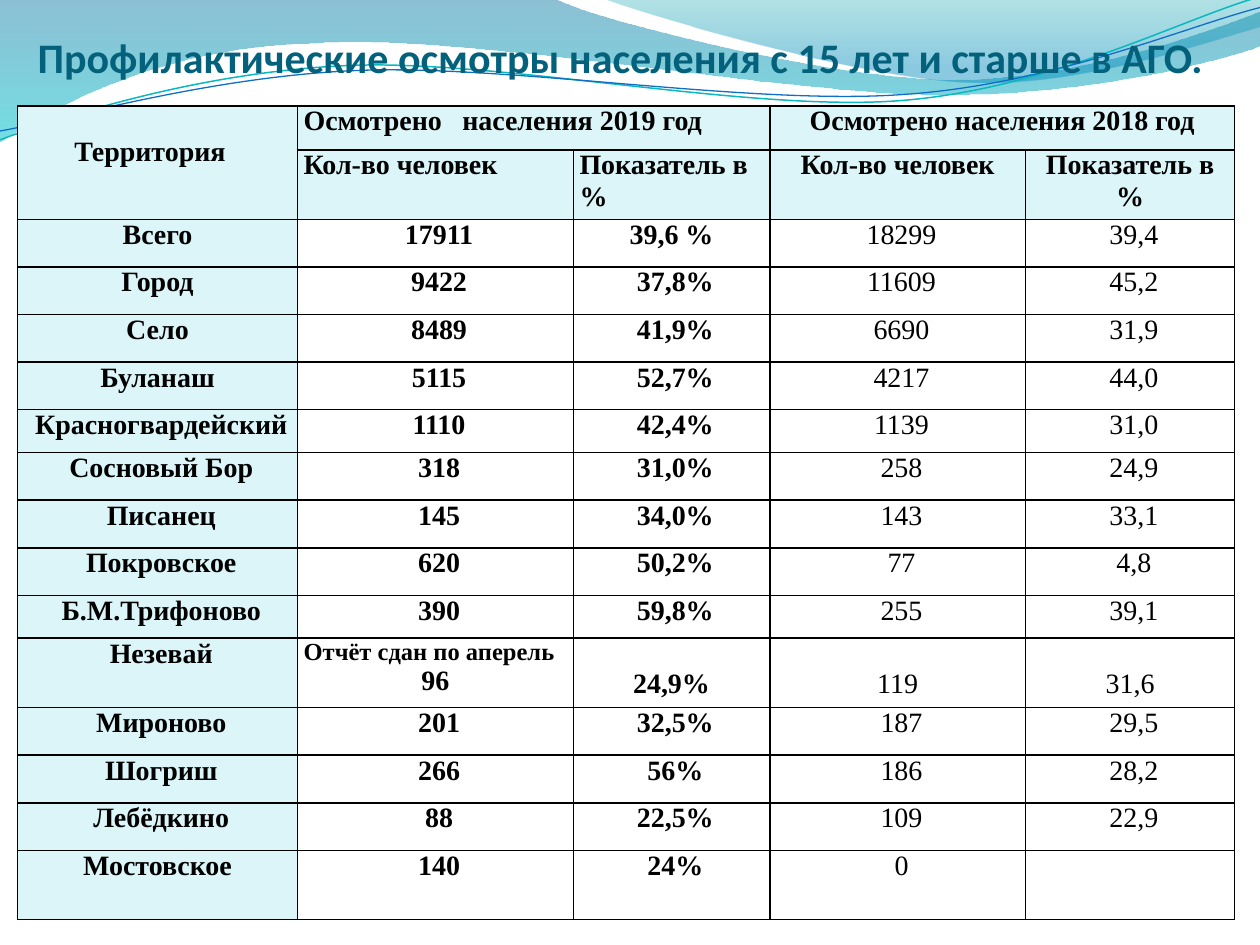
from math import cos, radians, sin

from pptx import Presentation
from pptx.dml.color import RGBColor
from pptx.enum.text import PP_ALIGN
from pptx.oxml import parse_xml
from pptx.oxml.ns import nsdecls, qn
from pptx.util import Inches, Pt
from lxml.etree import SubElement

THEME = {
    "title_font": "Calibri", "table_font": "Times New Roman",
    "title_size": 24, "table_size": 16, "remark_size": 14,
    "title": "04617B", "text": "000000", "head_fill": "DBF5F9",
    "border": "000000", "border_width": 1,
}
TITLE = "Профилактические осмотры населения с 15 лет и старше в АГО."
REMARK = "Отчёт сдан по аперель"
REMARK_PLACE = "Незевай"
HEADINGS = ["Кол-во человек", "Показатель в %"]
HEADER = [
    ["Территория", "Осмотрено\tнаселения 2019 год", "", "Осмотрено населения 2018 год", ""],
    ["", *HEADINGS, *HEADINGS],
]
RESULTS = [
    ["Всего", "17911", "39,6 %", "18299", "39,4"],
    ["Город", "9422", "37,8%", "11609", "45,2"],
    ["Село", "8489", "41,9%", "6690", "31,9"],
    ["Буланаш", "5115", "52,7%", "4217", "44,0"],
    ["Красногвардейский", "1110", "42,4%", "1139", "31,0"],
    ["Сосновый Бор", "318", "31,0%", "258", "24,9"],
    ["Писанец", "145", "34,0%", "143", "33,1"],
    ["Покровское", "620", "50,2%", "77", "4,8"],
    ["Б.М.Трифоново", "390", "59,8%", "255", "39,1"],
    [REMARK_PLACE, "96", "24,9%", "119", "31,6"],
    ["Мироново", "201", "32,5%", "187", "29,5"],
    ["Шогриш", "266", "56%", "186", "28,2"],
    ["Лебёдкино", "88", "22,5%", "109", "22,9"],
    ["Мостовское", "140", "24%", "0", ""],
]
CENTERED = {"Всего", "Город", "Село", "Буланаш", "Мостовское", "39,6 %"}
COLUMN_WIDTHS = [2.22, 2.19, 1.56, 2.03, 1.66]
SPECIAL_HEIGHTS = {0: 0.35, 1: 0.55, 6: 0.34, 10: 0.34, 11: 0.55, 15: 0.55}
TABLE_LEFT, TABLE_TOP, TABLE_HEIGHT = 0.14, 0.84, 6.46
SIDE_MARGINS = [0.05, 0.05, 0.05, 0.07, 0.07]
INDENT, LINE_DROP, TAB_STOP = 0.06, 0.24, 1.26

BANDS = [
    {"points": [(0, 0), (4.4, -0.01),
                [(4.76, 0.17), (6.64, 0.63), (7.58, 0.63)],
                [(8.53, 0.63), (9.58, 0.26), (10, 0.09)], (10.01, 0.36),
                [(9.83, 0.44), (8.7, 0.76), (7.46, 0.75)],
                [(6.22, 0.75), (3.82, 0.28), (2.57, 0.34)],
                [(1.29, 0.36), (0.46, 0.83), (-0.01, 1.13)], (0, 0)],
     "stops": [(0, "0074A1", 45), (1, "00C6CF", 55)]},
    {"points": [(4.79, -0.01),
                [(5.09, 0.11), (6.82, 0.62), (7.69, 0.65)],
                [(8.56, 0.69), (9.61, 0.32), (10, 0.21)], (10, 0), (4.79, -0.01)],
     "stops": [(0, "00A1A9", 30), (0.8, "008BBF", 45)]},
]
WAVES = [
    {"points": [(0, 1.11), [(0.48, 0.93), (1.58, 0.57), (2.77, 0.52)],
                [(3.95, 0.47), (5.93, 0.89), (7.13, 0.8)],
                [(8.33, 0.71), (9.38, 0.15), (9.98, -0.02)]],
     "color": "0AB8BF", "width": 0.85, "center": (4.99, 0.58)},
    {"points": [(0, 1.04), [(0.47, 0.96), (1.64, 0.61), (2.83, 0.56)],
                [(4.03, 0.51), (5.97, 0.84), (7.17, 0.75)],
                [(8.36, 0.67), (9.41, 0.21), (10, 0.06)]],
     "color": "0F6FC6", "width": 0.75, "center": (5, 0.59)},
]
WAVE_TILT = -2.7


def level(point, center):
    angle = radians(-WAVE_TILT)
    across, down = point[0] - center[0], point[1] - center[1]
    return (center[0] + across * cos(angle) - down * sin(angle),
            center[1] + across * sin(angle) + down * cos(angle))


def add_outline(page, points, closed):
    parts = [part if isinstance(part, list) else [part] for part in points]
    anchors = [(Inches(part[-1][0]), Inches(part[-1][1])) for part in parts]
    builder = page.shapes.build_freeform(*anchors[0])
    builder.add_line_segments(anchors[1:], close=closed)
    shape = builder.convert_to_shape()
    shape.shadow.inherit = False
    left, top = (min(values) for values in zip(*anchors))
    segments = list(shape.element.spPr.iter(qn("a:lnTo")))
    for segment, part in zip(segments, parts[1:]):
        if len(part) == 1:
            continue
        curve = parse_xml(f'<a:cubicBezTo {nsdecls("a")}/>')
        for x, y in part:
            corner = SubElement(curve, qn("a:pt"))
            corner.set("x", str(Inches(x) - left))
            corner.set("y", str(Inches(y) - top))
        segment.getparent().replace(segment, curve)
    return shape


def add_band(page, band):
    shape = add_outline(page, band["points"], True)
    shape.line.fill.background()
    shape.fill.gradient()
    shape.fill.gradient_angle = 270
    for stop, (position, color, _) in zip(shape.fill.gradient_stops, band["stops"]):
        stop.position = position
        stop.color.rgb = RGBColor.from_string(color)
    colors = shape.element.spPr.find(qn("a:gradFill")).iter(qn("a:srgbClr"))
    for color, (_, _, opacity) in zip(colors, band["stops"]):
        SubElement(color, qn("a:alpha")).set("val", str(opacity * 1000))


def add_wave(page, wave):
    center = wave["center"]
    points = [[level(point, center) for point in part] if isinstance(part, list)
              else level(part, center) for part in wave["points"]]
    shape = add_outline(page, points, False)
    shape.rotation = WAVE_TILT
    shape.fill.background()
    shape.line.color.rgb = RGBColor.from_string(wave["color"])
    shape.line.width = Pt(wave["width"])


def add_span(para, text, size, bold, font, color):
    span = para.add_run()
    span.text = text
    span.font.size = Pt(size)
    span.font.bold = bold
    span.font.name = font
    span.font.color.rgb = RGBColor.from_string(color)


def add_borders(cell):
    properties = cell._tc.get_or_add_tcPr()
    for index, side in enumerate(("lnL", "lnR", "lnT", "lnB")):
        properties.insert(index, parse_xml(
            f'<a:{side} {nsdecls("a")} w="{Pt(THEME["border_width"])}"><a:solidFill>'
            f'<a:srgbClr val="{THEME["border"]}"/></a:solidFill></a:{side}>'))


def fill_cell(cell, row, column, text, remarked):
    is_header = row < len(HEADER)
    is_corner = row == column == 0
    if is_header or column == 0:
        cell.fill.solid()
        cell.fill.fore_color.rgb = RGBColor.from_string(THEME["head_fill"])
    else:
        cell.fill.background()
    add_borders(cell)
    side = SIDE_MARGINS[column]
    indented = not is_header and text not in CENTERED and (column == 0 or not remarked)
    dropped = is_corner or (remarked and column > 1)
    cell.margin_left = Inches(side + INDENT * indented)
    cell.margin_right = Inches(side + 2 * INDENT * is_corner)
    cell.margin_top = Inches(LINE_DROP * dropped)
    cell.margin_bottom = 0
    if not text:
        return
    para = cell.text_frame.paragraphs[0]
    if remarked and column == 1:
        add_span(para, REMARK, THEME["remark_size"], True, THEME["table_font"], THEME["text"])
        para = cell.text_frame.add_paragraph()
    left_aligned = is_header and column in (1, 2)
    para.alignment = PP_ALIGN.LEFT if left_aligned else PP_ALIGN.CENTER
    if "\t" in text:
        stops = SubElement(para._p.get_or_add_pPr(), qn("a:tabLst"))
        stop = SubElement(stops, qn("a:tab"))
        stop.set("pos", str(Inches(TAB_STOP)))
        stop.set("algn", "l")
    add_span(para, text, THEME["table_size"], is_header or column < 3,
             THEME["table_font"], THEME["text"])


def add_results(page):
    rows = HEADER + RESULTS
    regular = ((TABLE_HEIGHT - sum(SPECIAL_HEIGHTS.values()))
               / (len(rows) - len(SPECIAL_HEIGHTS)))
    table = page.shapes.add_table(
        len(rows), len(COLUMN_WIDTHS), Inches(TABLE_LEFT), Inches(TABLE_TOP),
        Inches(sum(COLUMN_WIDTHS)), Inches(TABLE_HEIGHT)).table
    table.first_row = table.horz_banding = False
    for column, width in zip(table.columns, COLUMN_WIDTHS):
        column.width = Inches(width)
    for row, texts in enumerate(rows):
        table.rows[row].height = Inches(SPECIAL_HEIGHTS.get(row, regular))
        for column, text in enumerate(texts):
            fill_cell(table.cell(row, column), row, column, text, texts[0] == REMARK_PLACE)
    for first, last in (((0, 0), (1, 0)), ((0, 1), (0, 2)), ((0, 3), (0, 4))):
        table.cell(*first).merge(table.cell(*last))


def add_title(page):
    box = page.shapes.add_textbox(Inches(0.2), Inches(0.2), Inches(9.61), Inches(0.5))
    box.text_frame.word_wrap = True
    add_span(box.text_frame.paragraphs[0], TITLE, THEME["title_size"], True,
             THEME["title_font"], THEME["title"])


def main():
    """Build the slide on preventive check-ups by territory."""
    deck = Presentation()
    deck.slide_width, deck.slide_height = Inches(10), Inches(7.5)
    page = deck.slides.add_slide(deck.slide_layouts[6])
    for band in BANDS:
        add_band(page, band)
    for wave in WAVES:
        add_wave(page, wave)
    add_results(page)
    add_title(page)
    deck.save("out.pptx")


if __name__ == "__main__":
    main()
